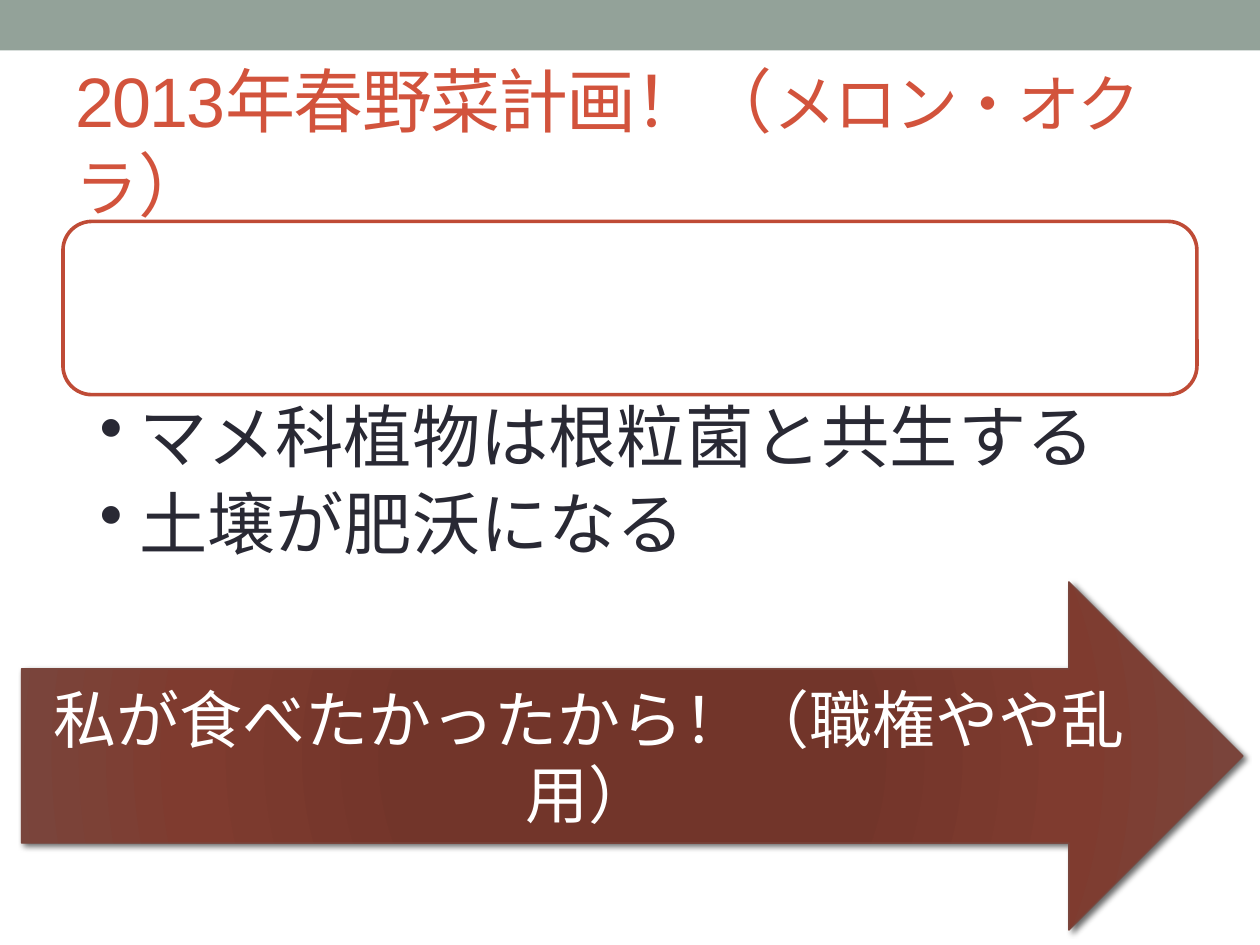
"""Build the 2013 spring vegetable plan slide."""
import pptx
import pptx.dml.color
import pptx.enum.shapes
import pptx.enum.text
import pptx.oxml
import pptx.oxml.ns
import pptx.util

Pt = pptx.util.Pt
Shape = pptx.enum.shapes.MSO_SHAPE
Anchor = pptx.enum.text.MSO_ANCHOR
Align = pptx.enum.text.PP_ALIGN

FONT = "Arial"
COLORS = {
    "band": "93A299",
    "title": "D2533C",
    "frame": "BF4B36",
    "body": "292934",
    "white": "FFFFFF",
    "edge": "79463D",
    "shadow": "000000",
}
ARROW_STOPS = [(0, "743327"), (34, "72352A"), (70, "7F3B2F"), (100, "79463D")]


def color(name):
    """Return the named colour."""
    return pptx.dml.color.RGBColor.from_string(COLORS[name])


def element(xml):
    """Parse a DrawingML fragment."""
    namespace = pptx.oxml.ns.nsdecls("a")
    return pptx.oxml.parse_xml(xml.replace(">", f" {namespace}>", 1))


def add_block(page, kind, place, fill=None, line=None, width=0.75):
    """Add a preset shape with an optional fill and outline."""
    block = page.shapes.add_shape(kind, *map(Pt, place))
    block.shadow.inherit = False
    if fill:
        block.fill.solid()
        block.fill.fore_color.rgb = color(fill)
    if line:
        block.line.color.rgb = color(line)
        block.line.width = Pt(width)
    else:
        block.line.fill.background()
    return block


def style_paragraph(para, size, name):
    """Set the font of a whole paragraph."""
    para.font.name = FONT
    para.font.size = Pt(size)
    para.font.color.rgb = color(name)


def add_text_box(page, place):
    """Add a wrapping text box and return its frame."""
    frame = page.shapes.add_textbox(*map(Pt, place)).text_frame
    frame.word_wrap = True
    return frame


def add_title(page, place, spans):
    """Add the title from pairs of text and size."""
    frame = add_text_box(page, place)
    frame.vertical_anchor = Anchor.MIDDLE
    para = frame.paragraphs[0]
    style_paragraph(para, 40, "title")
    for text, size in spans:
        span = para.add_run()
        span.text = text
        span.font.size = Pt(size)
        span.font._element.set("spc", "-100")


def add_bullets(page, place, lines):
    """Add the bulleted lines."""
    frame = add_text_box(page, place)
    frame.margin_left, frame.margin_right = Pt(21), Pt(28)
    frame.margin_top = frame.margin_bottom = Pt(5)
    for index, text in enumerate(lines):
        para = frame.add_paragraph() if index else frame.paragraphs[0]
        para.text = text
        para.line_spacing = 0.9
        para.space_after = Pt(7.8)
        style_paragraph(para, 39, "body")
        properties = para._p.get_or_add_pPr()
        properties.set("marL", str(Pt(22.5)))
        properties.set("indent", str(-Pt(22.5)))
        properties.find(pptx.oxml.ns.qn("a:defRPr")).addprevious(
            element('<a:buChar char="•"></a:buChar>'))


def add_arrow(page, place, text):
    """Add the shaded arrow with its centred message."""
    arrow = add_block(page, Shape.RIGHT_ARROW, place, line="edge")
    stops = "".join(
        f'<a:gs pos="{position * 1000}"><a:srgbClr val="{value}"/></a:gs>'
        for position, value in ARROW_STOPS)
    properties = arrow._element.spPr
    properties.find(pptx.oxml.ns.qn("a:prstGeom")).addnext(element(
        f'<a:gradFill><a:gsLst>{stops}</a:gsLst><a:path path="circle">'
        '<a:fillToRect l="50000" t="50000" r="50000" b="50000"/>'
        '</a:path></a:gradFill>'))
    properties.find(pptx.oxml.ns.qn("a:effectLst")).append(element(
        f'<a:outerShdw blurRad="{Pt(3)}" dist="{Pt(2)}" dir="2700000">'
        f'<a:srgbClr val="{COLORS["shadow"]}"><a:alpha val="60000"/>'
        '</a:srgbClr></a:outerShdw>'))
    frame = arrow.text_frame
    frame.word_wrap = True
    frame.vertical_anchor = Anchor.MIDDLE
    para = frame.paragraphs[0]
    para.text = text
    para.alignment = Align.CENTER
    style_paragraph(para, 36, "white")


def main():
    """Assemble and save the slide."""
    deck = pptx.Presentation()
    deck.slide_width, deck.slide_height = Pt(720), Pt(540)
    page = deck.slides.add_slide(deck.slide_layouts[6])
    add_block(page, Shape.RECTANGLE, (0, 0, 720, 28.8), "band")
    add_title(page, (36, 42, 648, 78), [
        ("2013年春野菜計画！（", 40), ("メロン・オクラ", 36), ("）", 40)])
    add_block(page, Shape.ROUNDED_RECTANGLE, (36, 126.5, 648, 99),
              "white", "frame", 2.08)
    add_bullets(page, (36, 225.5, 648, 112),
                ["マメ科植物は根粒菌と共生する", "土壌が肥沃になる"])
    add_arrow(page, (12.3, 332.5, 698, 199),
              "私が食べたかったから！（職権やや乱用）")
    deck.save("out.pptx")


if __name__ == "__main__":
    main()
